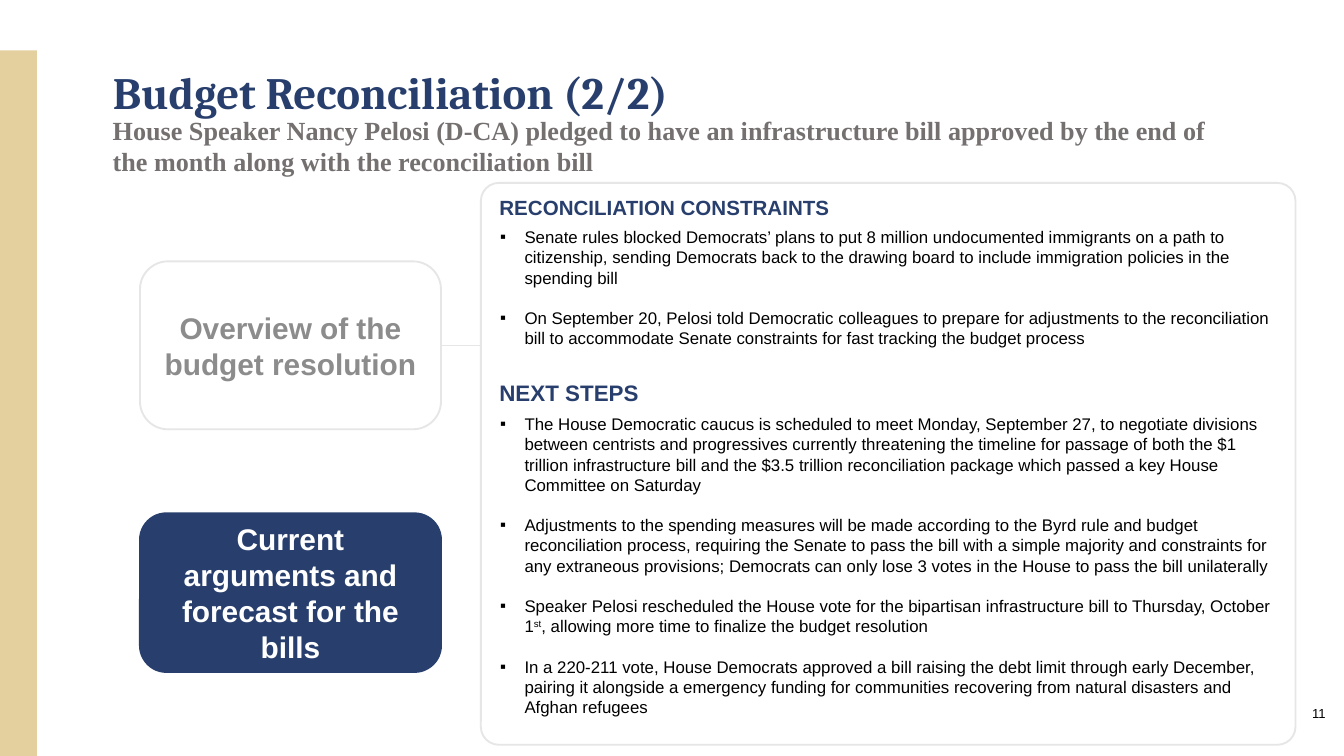
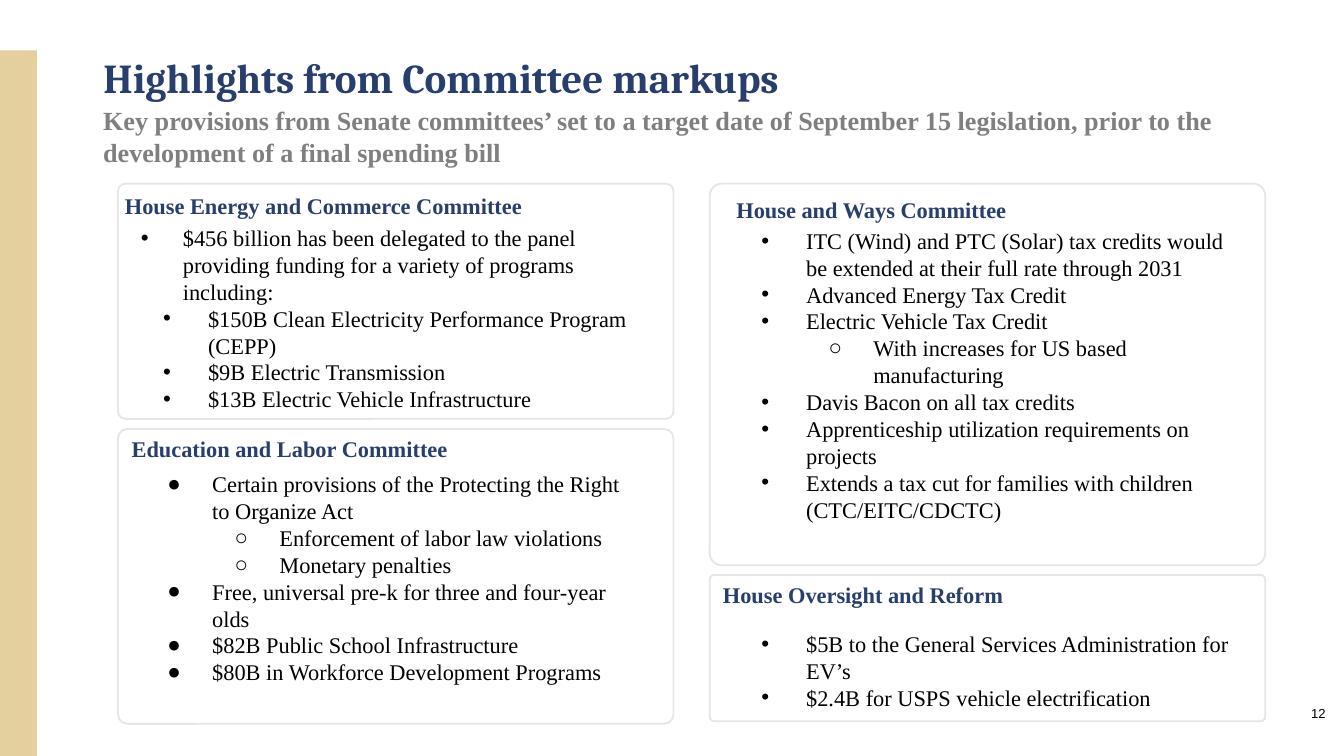
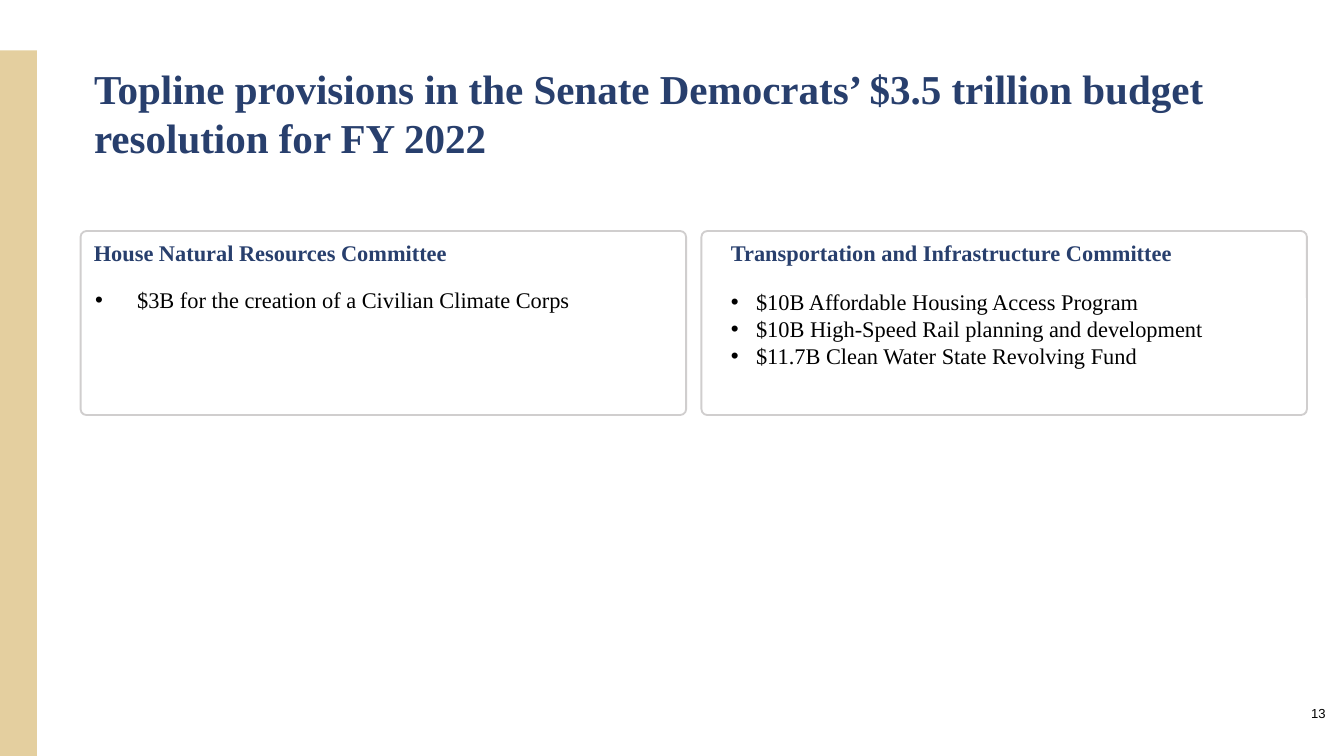
from dataclasses import dataclass

from lxml.etree import SubElement
from pptx import Presentation
from pptx.dml.color import RGBColor
from pptx.enum.shapes import MSO_CONNECTOR, MSO_SHAPE
from pptx.enum.text import MSO_ANCHOR, MSO_AUTO_SIZE, PP_ALIGN
from pptx.oxml.ns import qn
from pptx.util import Pt


@dataclass(frozen=True)
class Theme:
    navy: str = "283F6D"
    gold: str = "D2AE5A"
    white: str = "FFFFFF"
    black: str = "000000"
    subtitle_gray: str = "757070"
    light_subtitle_gray: str = "7F7F7F"
    muted: str = "8B8C8B"
    pale_border: str = "E7E6E6"
    border: str = "D0CECE"
    sans: str = "Arial"
    serif: str = "Times New Roman"
    display: str = "Cambria"
    title_size: float = 22
    large_title_size: float = 24
    subtitle_size: float = 14
    step_size: float = 16
    body_size: float = 12
    small_heading_size: float = 11
    detail_size: float = 9
    page_size: float = 7


@dataclass(frozen=True)
class Bullet:
    glyph: str
    margin: float
    hanging: float
    level: int = 0


SQUARE = Bullet("▪", 13.5, 13)
LEAD = Bullet("•", 22.5, 22.5)
TIGHT = Bullet("•", 13.5, 13.5)
DOT = Bullet("•", 36, 24)
DISC = Bullet("●", 36, 24)
RING = Bullet("○", 72, 24, 1)

THEME = Theme()
FIRST_PAGE = 11
LINE_GAP = 10.8


class Deck:
    def __init__(self, theme):
        self.theme = theme
        self.presentation = Presentation()
        self.presentation.slide_width = Pt(720)
        self.presentation.slide_height = Pt(405)
        self.page = FIRST_PAGE
        self.slide = None

    def new_slide(self):
        self.slide = self.presentation.slides.add_slide(self.presentation.slide_layouts[5])
        self.band()
        self.page_number()

    def band(self):
        band = self.shape(MSO_SHAPE.RECTANGLE, (0, 27, 19.8, 378), self.theme.gold)
        fill = band.element.spPr.find(qn("a:solidFill"))
        SubElement(fill.find(qn("a:srgbClr")), qn("a:alpha")).set("val", "58000")

    def page_number(self):
        frame = self.text_frame((674, 373.7, 43.2, 31))
        frame.margin_top = frame.margin_bottom = Pt(7.2)
        self.set_text(frame.paragraphs[0], str(self.page), self.theme.page_size,
                      self.theme.sans, self.theme.black, align=PP_ALIGN.RIGHT)
        self.page += 1

    def title(self, text, box, size, font):
        title = self.slide.shapes.title
        title.left, title.top, title.width, title.height = map(Pt, box)
        frame = title.text_frame
        frame.word_wrap = True
        frame.auto_size = MSO_AUTO_SIZE.NONE
        frame.vertical_anchor = MSO_ANCHOR.TOP
        self.set_text(frame.paragraphs[0], text, size, font, self.theme.navy, bold=True)

    def subtitle(self, text, left, top, color):
        frame = self.text_frame((left, top, 617, 41))
        self.set_text(frame.paragraphs[0], text, self.theme.subtitle_size,
                      self.theme.serif, color, bold=True)

    def heading(self, text, left, top, width):
        frame = self.text_frame((left, top, width, 21.6))
        self.set_text(frame.paragraphs[0], text, self.theme.body_size,
                      self.theme.serif, self.theme.navy, bold=True)

    def bullets(self, items, box):
        frame = self.text_frame(box)
        for position, (bullet, text) in enumerate(items):
            paragraph = frame.add_paragraph() if position else frame.paragraphs[0]
            self.set_text(paragraph, text, self.theme.body_size, self.theme.serif,
                          self.theme.black, bullet=bullet)

    def text_frame(self, box):
        frame = self.slide.shapes.add_textbox(*map(Pt, box)).text_frame
        frame.word_wrap = True
        return frame

    def shape(self, preset, box, fill, line=None):
        shape = self.slide.shapes.add_shape(preset, *map(Pt, box))
        shape.shadow.inherit = False
        shape.fill.solid()
        shape.fill.fore_color.rgb = RGBColor.from_string(fill)
        if line:
            shape.line.color.rgb = RGBColor.from_string(line)
            shape.line.width = Pt(1)
        else:
            shape.line.fill.background()
        return shape

    def panel(self, box, line):
        panel = self.shape(MSO_SHAPE.ROUNDED_RECTANGLE, box, self.theme.white, line)
        panel.adjustments[0] = 0.032
        return panel

    def step(self, text, box, fill, line, color):
        step = self.shape(MSO_SHAPE.ROUNDED_RECTANGLE, box, fill, line)
        step.text_frame.vertical_anchor = MSO_ANCHOR.MIDDLE
        self.set_text(step.text_frame.paragraphs[0], text, self.theme.step_size,
                      self.theme.sans, color, bold=True, align=PP_ALIGN.CENTER)
        return step

    def link_from(self, step, end):
        middle = step.top + step.height // 2
        link = self.slide.shapes.add_connector(
            MSO_CONNECTOR.STRAIGHT, step.left + step.width, middle, Pt(end), middle)
        link.begin_connect(step, 3)
        link.line.color.rgb = RGBColor.from_string(self.theme.pale_border)
        link.line.width = Pt(0.75)
        SubElement(link.element.spPr, qn("a:effectLst"))

    def detail_panel(self, sections, box):
        frame = self.panel(box, self.theme.pale_border).text_frame
        frame.vertical_anchor = MSO_ANCHOR.TOP
        paragraph = frame.paragraphs[0]
        for number, (heading, size, items) in enumerate(sections):
            if number:
                paragraph = frame.add_paragraph()
            self.set_text(paragraph, heading, size, self.theme.sans, self.theme.navy,
                          bold=True, before=LINE_GAP + 6 if number else 0)
            for position, item in enumerate(items):
                self.set_text(frame.add_paragraph(), item, self.theme.detail_size,
                              self.theme.sans, self.theme.black, bullet=SQUARE,
                              before=LINE_GAP if position else 4)

    def set_text(self, paragraph, text, size, font, color, bold=False,
                 align=PP_ALIGN.LEFT, bullet=None, before=0):
        for position, part in enumerate(text.split("^")):
            run = paragraph.add_run()
            run.text = part
            if position % 2:
                run._r.get_or_add_rPr().set("baseline", "30000")
        paragraph.alignment = align
        if bullet:
            paragraph.level = bullet.level
            properties = paragraph._p.get_or_add_pPr()
            properties.set("marL", str(Pt(bullet.margin)))
            properties.set("indent", str(-Pt(bullet.hanging)))
            SubElement(properties, qn("a:buFont")).set("typeface", self.theme.sans)
            SubElement(properties, qn("a:buChar")).set("char", bullet.glyph)
        if before:
            paragraph.space_before = Pt(before)
        paragraph.font.size = Pt(size)
        paragraph.font.name = font
        paragraph.font.bold = bold
        paragraph.font.color.rgb = RGBColor.from_string(color)


CONSTRAINTS = [
    "Senate rules blocked Democrats’ plans to put 8 million undocumented immigrants on a path to "
    "citizenship, sending Democrats back to the drawing board to include immigration policies in "
    "the spending bill",
    "On September 20, Pelosi told Democratic colleagues to prepare for adjustments to the "
    "reconciliation bill to accommodate Senate constraints for fast tracking the budget process",
]
NEXT_STEPS = [
    "The House Democratic caucus is scheduled to meet Monday, September 27, to negotiate divisions "
    "between centrists and progressives currently threatening the timeline for passage of both the "
    "$1 trillion infrastructure bill and the $3.5 trillion reconciliation package which passed a "
    "key House Committee on Saturday",
    "Adjustments to the spending measures will be made according to the Byrd rule and budget "
    "reconciliation process, requiring the Senate to pass the bill with a simple majority and "
    "constraints for any extraneous provisions; Democrats can only lose 3 votes in the House to "
    "pass the bill unilaterally",
    "Speaker Pelosi rescheduled the House vote for the bipartisan infrastructure bill to Thursday, "
    "October 1^st^, allowing more time to finalize the budget resolution",
    "In a 220-211 vote, House Democrats approved a bill raising the debt limit through early "
    "December, pairing it alongside a emergency funding for communities recovering from natural "
    "disasters and Afghan refugees",
]
ENERGY = [
    (LEAD, "$456 billion has been delegated to the panel providing funding for a variety of "
           "programs including:"),
    (DOT, "$150B Clean Electricity Performance Program (CEPP)"),
    (DOT, "$9B Electric Transmission"),
    (DOT, "$13B Electric Vehicle Infrastructure"),
]
EDUCATION = [
    (DISC, "Certain provisions of the Protecting the Right to Organize Act"),
    (RING, "Enforcement of labor law violations"),
    (RING, "Monetary penalties"),
    (DISC, "Free, universal pre-k for three and four-year olds"),
    (DISC, "$82B Public School Infrastructure"),
    (DISC, "$80B in Workforce Development Programs"),
]
WAYS = [
    (DOT, "ITC (Wind) and PTC (Solar) tax credits would be extended at their full rate through 2031"),
    (DOT, "Advanced Energy Tax Credit"),
    (DOT, "Electric Vehicle Tax Credit"),
    (RING, "With increases for US based manufacturing"),
    (DOT, "Davis Bacon on all tax credits"),
    (DOT, "Apprenticeship utilization requirements on projects"),
    (DOT, "Extends a tax cut for families with children (CTC/EITC/CDCTC)"),
]
OVERSIGHT = [
    (DOT, "$5B to the General Services Administration for EV’s"),
    (DOT, "$2.4B for USPS vehicle electrification"),
]
RESOURCES = [(LEAD, "$3B for the creation of a Civilian Climate Corps")]
TRANSPORTATION = [
    (TIGHT, "$10B Affordable Housing Access Program"),
    (TIGHT, "$10B High-Speed Rail planning and development"),
    (TIGHT, "$11.7B Clean Water State Revolving Fund"),
]


def reconciliation(deck):
    theme = deck.theme
    deck.new_slide()
    deck.subtitle("House Speaker Nancy Pelosi (D-CA) pledged to have an infrastructure bill approved "
                  "by the end of the month along with the reconciliation bill",
                  53.3, 57.6, theme.subtitle_gray)
    deck.title("Budget Reconciliation (2/2)", (53.3, 31, 578, 36),
               theme.large_title_size, theme.display)
    overview = deck.step("Overview of the budget resolution", (75, 140, 161.3, 90),
                         theme.white, theme.pale_border, theme.muted)
    deck.step("Current arguments and forecast for the bills", (75, 275, 161.3, 85),
              theme.navy, theme.navy, theme.white)
    deck.link_from(overview, 269.3)
    deck.detail_panel([
        ("RECONCILIATION CONSTRAINTS", theme.small_heading_size, CONSTRAINTS),
        ("NEXT STEPS", theme.body_size, NEXT_STEPS),
    ], (257.6, 98, 436.4, 301))


def markups(deck):
    theme = deck.theme
    deck.new_slide()
    deck.subtitle("Key provisions from Senate committees’ set to a target date of September 15 "
                  "legislation, prior to the development of a final spending bill",
                  48.2, 52.6, theme.light_subtitle_gray)
    deck.title("Highlights from Committee markups", (48.2, 24.5, 583, 34),
               theme.title_size, theme.display)
    left, right, width = 63.2, 380.2, 297.6
    committees = [
        ("House Energy and Commerce Committee", (left, 98.4, width, 126),
         (59.8, 99.4), ENERGY, (68.4, 116.6, 280.8, 138)),
        ("Education and Labor Committee", (left, 229.8, width, 158),
         (63.4, 229.7), EDUCATION, (70.6, 248.4, 280.8, 138)),
        ("House and Ways Committee", (right, 98.4, width, 204.5),
         (387.4, 101.5), WAYS, (388.8, 118, 280.8, 167)),
        ("House Oversight and Reform", (right, 308, width, 78.4),
         (380.2, 308), OVERSIGHT, (388.8, 334, 280.8, 51)),
    ]
    for _, panel, _, _, _ in committees:
        deck.panel(panel, theme.pale_border)
    for name, _, corner, provisions, area in committees:
        deck.heading(name, *corner, 262)
        deck.bullets(provisions, area)


def topline(deck):
    theme = deck.theme
    deck.new_slide()
    deck.title("Topline provisions in the Senate Democrats’ $3.5 trillion budget resolution "
               "for FY 2022", (43.2, 30.2, 622, 60.5), theme.title_size, theme.serif)
    committees = [
        ("House Natural Resources Committee", 43.2, 43.2, RESOURCES, (43.9, 149.8, 316, 21.6)),
        ("Transportation and Infrastructure Committee", 375.8, 384.5, TRANSPORTATION,
         (384.5, 151, 316, 51)),
    ]
    for name, panel_left, heading_left, provisions, area in committees:
        deck.panel((panel_left, 123.8, 324.4, 98.6), theme.border)
        deck.heading(name, heading_left, 124.6, 307)
        deck.bullets(provisions, area)


def main():
    deck = Deck(THEME)
    reconciliation(deck)
    markups(deck)
    topline(deck)
    deck.presentation.save("out.pptx")


if __name__ == "__main__":
    main()
